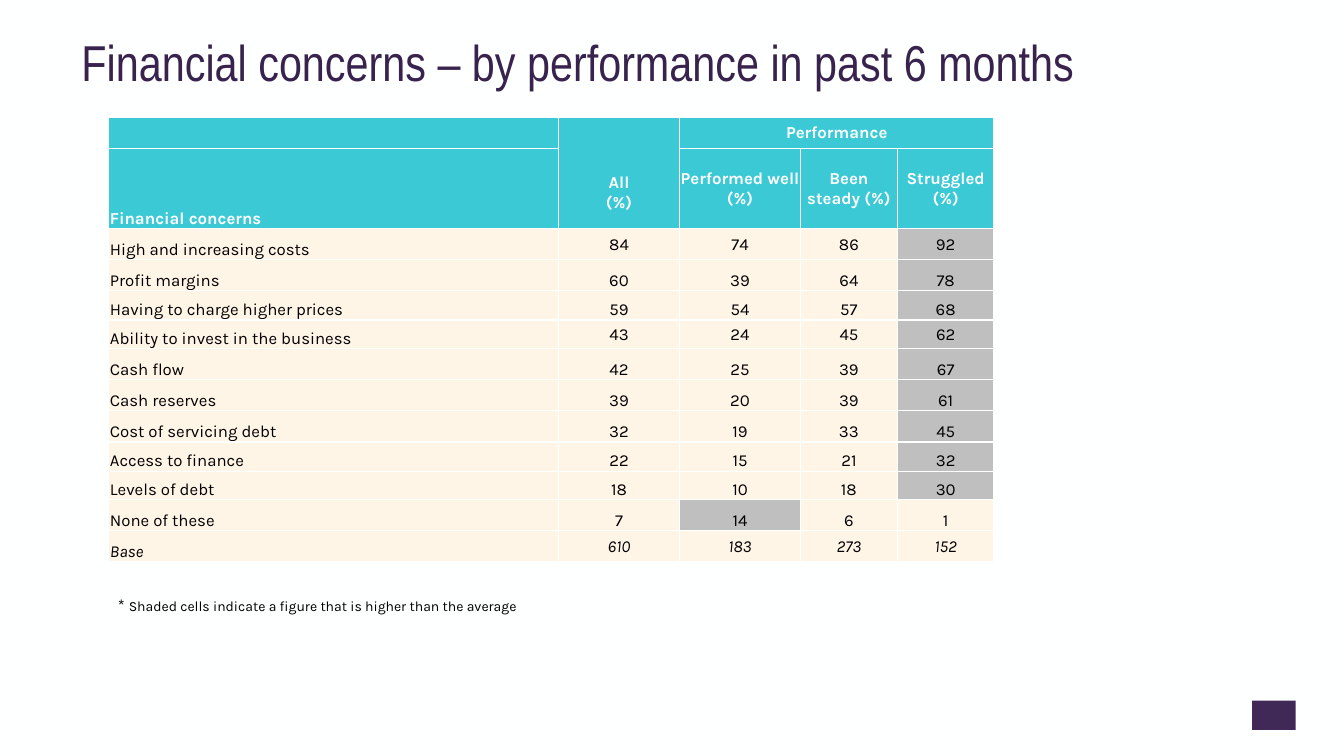
from dataclasses import dataclass

from lxml import etree
from pptx import Presentation
from pptx.dml.color import RGBColor
from pptx.enum.shapes import MSO_SHAPE
from pptx.enum.text import MSO_ANCHOR, PP_ALIGN
from pptx.oxml.ns import qn
from pptx.util import Inches, Pt

RECT = MSO_SHAPE.RECTANGLE
MIDDLE, BOTTOM = MSO_ANCHOR.MIDDLE, MSO_ANCHOR.BOTTOM
LEFT, CENTER = PP_ALIGN.LEFT, PP_ALIGN.CENTER


@dataclass(frozen=True)
class Theme:
    paper: str = "FEFFFF"
    ink: str = "000000"
    title: str = "38234E"
    accent: str = "402957"
    header: str = "3BC9D5"
    body: str = "FFF5E7"
    shaded: str = "BFBFBF"
    title_font: str = "Arial Narrow"
    body_font: str = "Karla"
    title_size: int = 36
    table_size: int = 12
    note_size: int = 10


THEME = Theme()

COL_WIDTHS = [4.46, 1.2, 1.2, 0.96, 0.96]
ROW_HEIGHTS = [0.31, 0.71, 0.31, 0.31, 0.29, 0.28, 0.31,
               0.31, 0.31, 0.29, 0.28, 0.31, 0.31]
GROUPS = ["Performed well (%)", "Been steady (%)", "Struggled (%)"]

# Concern, anchor of its figures, then All and the three performance groups
CONCERNS = [
    ("High and increasing costs", MIDDLE, (84, 74, 86, 92)),
    ("Profit margins", BOTTOM, (60, 39, 64, 78)),
    ("Having to charge higher prices", BOTTOM, (59, 54, 57, 68)),
    ("Ability to invest in the business", MIDDLE, (43, 24, 45, 62)),
    ("Cash flow", BOTTOM, (42, 25, 39, 67)),
    ("Cash reserves", BOTTOM, (39, 20, 39, 61)),
    ("Cost of servicing debt", BOTTOM, (32, 19, 33, 45)),
    ("Access to finance", BOTTOM, (22, 15, 21, 32)),
    ("Levels of debt", BOTTOM, (18, 10, 18, 30)),
    ("None of these", BOTTOM, (7, 14, 6, 1)),
]
BASE = (610, 183, 273, 152)


def rgb(value):
    return RGBColor.from_string(value)


def add_run(p, text, size, color, font=THEME.body_font, bold=False, italic=False):
    r = p.add_run()
    r.text = text
    r.font.size = Pt(size)
    r.font.name = font
    r.font.bold = bold
    r.font.italic = italic
    r.font.color.rgb = rgb(color)


def add_text_box(s, left, top, width, height):
    tf = s.shapes.add_textbox(Inches(left), Inches(top),
                              Inches(width), Inches(height)).text_frame
    tf.word_wrap = True
    return tf


def set_borders(cell):
    tc_pr = cell._tc.get_or_add_tcPr()
    for side in ("a:lnL", "a:lnR", "a:lnT", "a:lnB"):
        line = etree.SubElement(tc_pr, qn(side), w=str(Pt(1)))
        fill = etree.SubElement(line, qn("a:solidFill"))
        etree.SubElement(fill, qn("a:srgbClr"), val=THEME.paper)


def style_cell(cell, fill):
    set_borders(cell)
    cell.fill.solid()
    cell.fill.fore_color.rgb = rgb(fill)
    cell.margin_left = cell.margin_right = cell.margin_top = Inches(0.01)
    cell.margin_bottom = Inches(0)


def write_cell(cell, lines, anchor, align, color, bold=False, italic=False):
    cell.vertical_anchor = anchor
    tf = cell.text_frame
    for i, line in enumerate(lines):
        p = tf.add_paragraph() if i else tf.paragraphs[0]
        p.alignment = align
        add_run(p, line, THEME.table_size, color, bold=bold, italic=italic)


def write_header(table):
    for row in range(2):
        for col in range(len(COL_WIDTHS)):
            style_cell(table.cell(row, col), THEME.header)
    table.cell(0, 1).merge(table.cell(1, 1))
    table.cell(0, 2).merge(table.cell(0, 4))

    def head(row, col, lines, anchor=MIDDLE, align=CENTER):
        write_cell(table.cell(row, col), lines, anchor, align, THEME.paper, bold=True)

    head(1, 0, ["Financial concerns"], BOTTOM, LEFT)
    head(0, 1, ["All", "(%)"])
    table.cell(0, 1).margin_top = Inches(0.4)
    head(0, 2, ["Performance"])
    for col, group in enumerate(GROUPS, start=2):
        head(1, col, [group])


def write_row(table, row, label, anchor, figures, shade=True, italic=False):
    cell = table.cell(row, 0)
    style_cell(cell, THEME.body)
    write_cell(cell, [label], BOTTOM, LEFT, THEME.ink, italic=italic)
    # The highest performance group of each concern is shaded
    highest = max(figures[1:])
    for col, figure in enumerate(figures, start=1):
        cell = table.cell(row, col)
        marked = shade and col > 1 and figure == highest
        style_cell(cell, THEME.shaded if marked else THEME.body)
        write_cell(cell, [str(figure)], anchor, CENTER, THEME.ink, italic=italic)


def add_concerns_table(s):
    table = s.shapes.add_table(
        len(ROW_HEIGHTS), len(COL_WIDTHS), Inches(1.08), Inches(1.16),
        Inches(sum(COL_WIDTHS)), Inches(sum(ROW_HEIGHTS))).table
    table.horz_banding = False
    for column, width in zip(table.columns, COL_WIDTHS):
        column.width = Inches(width)
    for row, height in zip(table.rows, ROW_HEIGHTS):
        row.height = Inches(height)
    write_header(table)
    for row, concern in enumerate(CONCERNS, start=2):
        write_row(table, row, *concern)
    write_row(table, len(ROW_HEIGHTS) - 1, "Base", MIDDLE, BASE,
              shade=False, italic=True)


def add_title(s, text):
    p = add_text_box(s, 0.71, 0.33, 11.35, 0.72).paragraphs[0]
    p.line_spacing = 0.9
    add_run(p, text, THEME.title_size, THEME.title, THEME.title_font)


def add_footnote(s, mark, text):
    tf = add_text_box(s, 1.16, 5.97, 9.73, 0.26)
    tf.margin_left = Inches(0.01)
    tf.margin_top = Inches(0.02)
    tf.margin_right = tf.margin_bottom = Inches(0)
    p = tf.paragraphs[0]
    p.line_spacing = Pt(8.2)
    add_run(p, mark, THEME.table_size, THEME.ink)
    add_run(p, text, THEME.note_size, THEME.ink)


def add_corner_block(s):
    sp = s.shapes.add_shape(RECT, Inches(12.42), Inches(6.95),
                            Inches(0.43), Inches(0.29))
    sp.shadow.inherit = False
    sp.fill.solid()
    sp.fill.fore_color.rgb = rgb(THEME.accent)
    sp.line.fill.background()


def main():
    prs = Presentation()
    prs.slide_width, prs.slide_height = Inches(13.33), Inches(7.5)
    s = prs.slides.add_slide(prs.slide_layouts[6])
    s.background.fill.solid()
    s.background.fill.fore_color.rgb = rgb(THEME.paper)

    add_corner_block(s)
    add_concerns_table(s)
    add_title(s, "Financial concerns – by performance in past 6 months")
    add_footnote(s, "* ", "Shaded cells indicate a figure that is higher than the average")
    prs.save("out.pptx")


if __name__ == "__main__":
    main()
